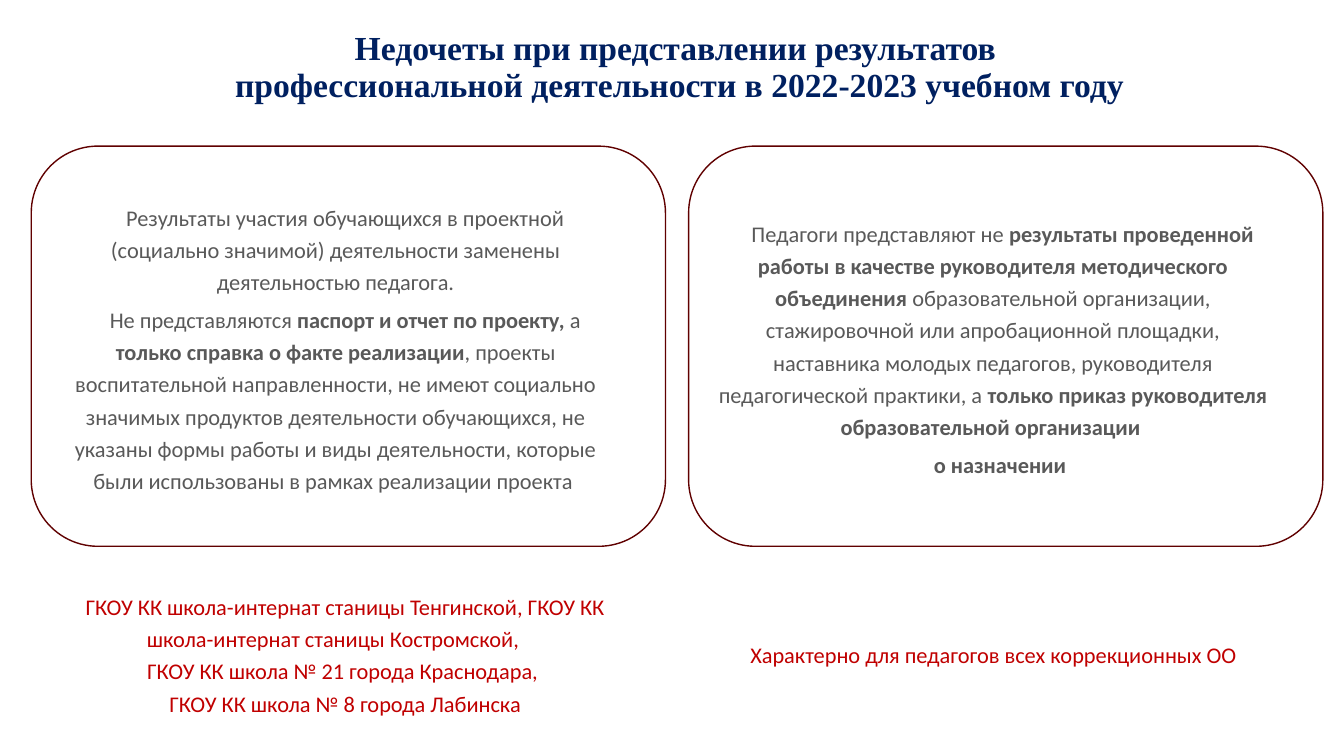
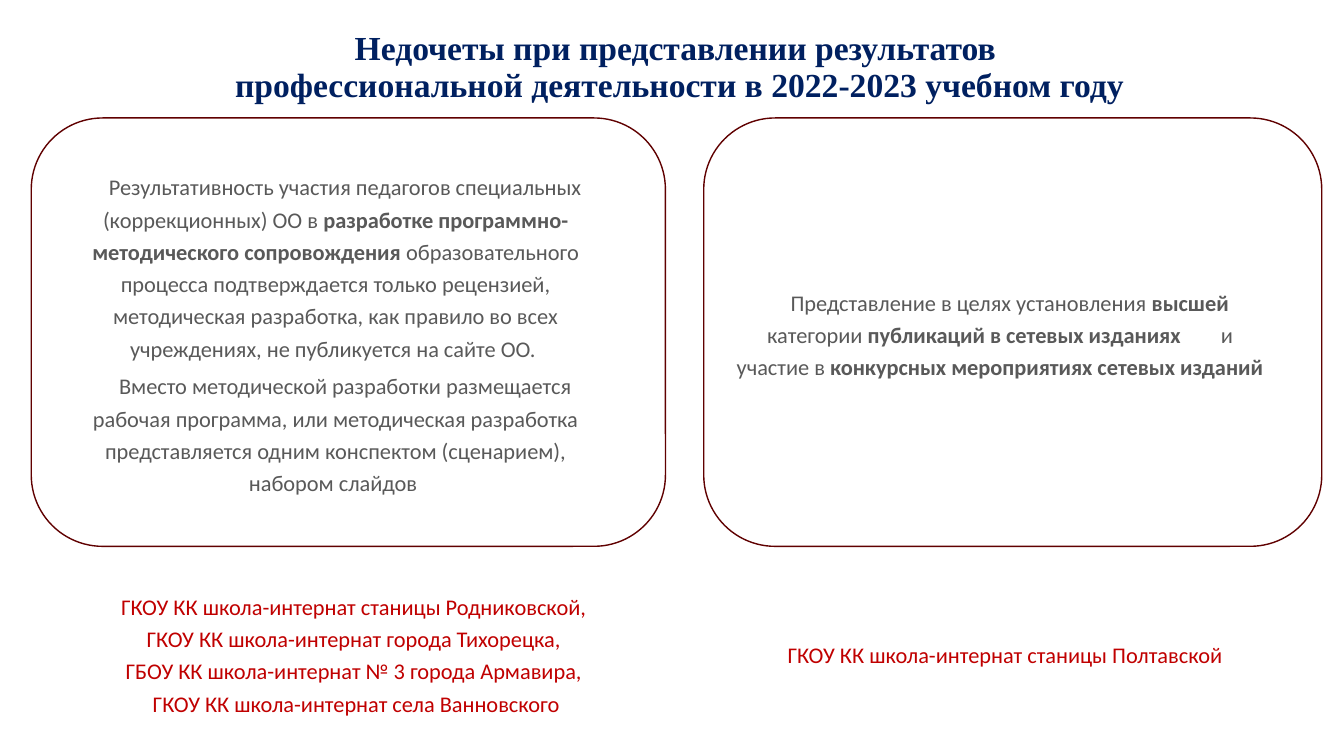
from lxml.etree import SubElement
from pptx import Presentation
from pptx.dml.color import RGBColor
from pptx.enum.shapes import MSO_SHAPE as Preset
from pptx.enum.text import MSO_ANCHOR as Anchor, PP_ALIGN as Align
from pptx.oxml.ns import qn
from pptx.util import Inches, Pt

# Shared style
NAVY = RGBColor(0x00, 0x20, 0x60)
MAROON = RGBColor(0x60, 0x00, 0x00)
GRAY = RGBColor(0x59, 0x59, 0x59)
RED = RGBColor(0xC0, 0x00, 0x00)
TITLE_FONT, BODY_FONT = "Times New Roman", "Calibri"
TITLE = ("Недочеты при представлении результатов \v"
         "профессиональной деятельности в 2022-2023 учебном году")

# Shared layout, in inches
LEFT = 0.31
PANEL_BOTTOM = 5.42
FIRST_INDENT = 0.19
RIGHT_INSET = 0.35
GAP_STOP = 4.9

# Content: ** switches bold on and off; a box is (left, width, paragraphs)
SLIDES = [
    {
        "panel_top": 1.45,
        "panels": [
            (LEFT, 6.29, [
                "Результаты участия обучающихся в проектной (социально значимой) "
                "деятельности заменены деятельностью педагога.",
                "Не представляются **паспорт и отчет по проекту,** а **только "
                "справка о факте реализации**, проекты воспитательной "
                "направленности, не имеют социально значимых продуктов "
                "деятельности обучающихся, не указаны формы работы и виды "
                "деятельности, которые были использованы в рамках реализации "
                "проекта ",
            ]),
            (6.83, 6.29, [
                "Педагоги представляют не **результаты проведенной работы в "
                "качестве руководителя методического объединения **"
                "образовательной организации, стажировочной или апробационной "
                "площадки, наставника молодых педагогов, руководителя "
                "педагогической практики, а **только приказ руководителя "
                "образовательной организации **",
                "**о назначении **",
            ]),
        ],
        "schools": (LEFT, 6.29, [
            "ГКОУ КК школа-интернат станицы Тенгинской, "
            "ГКОУ КК школа-интернат станицы Костромской, ",
            "ГКОУ КК школа № 21 города Краснодара, ",
            "ГКОУ КК школа № 8 города Лабинска",
        ]),
        "remark": (6.74, 6.29, ["Характерно для педагогов всех коррекционных ОО"]),
    },
    {
        "panel_top": 1.17,
        "panels": [
            (LEFT, 6.29, [
                "Результативность участия педагогов специальных "
                "(коррекционных) ОО в **разработке программно-методического "
                "сопровождения** образовательного процесса подтверждается только "
                "рецензией, методическая разработка, как правило во всех "
                "учреждениях, не публикуется на сайте ОО. ",
                "Вместо методической разработки размещается рабочая программа, "
                "или методическая разработка представляется одним конспектом "
                "(сценарием), набором слайдов ",
            ]),
            (6.98, 6.13, [
                "Представление в целях установления **высшей **категории "
                "**публикаций в сетевых изданиях**\tи участие в "
                "**конкурсных мероприятиях сетевых изданий **",
            ]),
        ],
        "schools": (LEFT, 6.51, [
            "ГКОУ КК школа-интернат станицы Родниковской, ",
            "ГКОУ КК школа-интернат города Тихорецка, ",
            "ГБОУ КК школа-интернат № 3 города Армавира, ",
            "ГКОУ КК школа-интернат села Ванновского",
        ]),
        "remark": (6.98, 6.04, ["ГКОУ КК школа-интернат станицы Полтавской"]),
    },
]


def style_font(font, name, size, color):
    font.name, font.size, font.color.rgb = name, Pt(size), color


def set_title(slide):
    title = slide.shapes.title
    title.left, title.top = Inches(0.48), Inches(0.19)
    title.width, title.height = Inches(12.52), Inches(0.97)
    title.text_frame.vertical_anchor = Anchor.MIDDLE
    heading = title.text_frame.paragraphs[0]
    heading.text = TITLE
    heading.alignment = Align.CENTER
    heading.line_spacing = 0.9
    heading.font.bold = True
    style_font(heading.font, TITLE_FONT, 24, NAVY)


def fill_paragraph(paragraph, text, color, spacing):
    paragraph.alignment = Align.CENTER
    paragraph.line_spacing = 1.2
    paragraph.space_before = paragraph.space_after = Pt(spacing)
    properties = paragraph._p.get_or_add_pPr()
    properties.set("marL", "0")
    properties.set("indent", str(Inches(FIRST_INDENT)))
    if "\t" in text:
        stops = SubElement(properties, qn("a:tabLst"))
        SubElement(stops, qn("a:tab"), pos=str(Inches(GAP_STOP)), algn="l")
    style_font(paragraph.font, BODY_FONT, 16, color)
    for index, part in enumerate(text.split("**")):
        if part:
            run = paragraph.add_run()
            run.text = part
            run.font.bold = index % 2 == 1


def add_box(slide, box, top, height, color, outline=None, spacing=0):
    left, width, texts = box
    shape = slide.shapes.add_shape(Preset.ROUNDED_RECTANGLE, Inches(left),
                                   Inches(top), Inches(width), Inches(height))
    shape.shadow.inherit = False
    shape.fill.background()
    if outline is None:
        shape.line.fill.background()
    else:
        shape.line.color.rgb = outline
        shape.line.width = Pt(1)
    frame = shape.text_frame
    frame.word_wrap = True
    frame.vertical_anchor = Anchor.MIDDLE
    frame.margin_right = Inches(RIGHT_INSET)
    for index, text in enumerate(texts):
        paragraph = frame.add_paragraph() if index else frame.paragraphs[0]
        fill_paragraph(paragraph, text, color, spacing)


def add_findings(deck, content):
    slide = deck.slides.add_slide(deck.slide_layouts[5])
    set_title(slide)
    # Outlined findings
    top = content["panel_top"]
    for panel in content["panels"]:
        add_box(slide, panel, top, PANEL_BOTTOM - top, GRAY, MAROON, spacing=2)
    # Schools concerned, below the findings
    add_box(slide, content["remark"], 5.87, 1.19, RED)
    add_box(slide, content["schools"], 5.69, 1.56, RED)


def main():
    deck = Presentation()
    deck.slide_width, deck.slide_height = Inches(13.33), Inches(7.5)
    for content in SLIDES:
        add_findings(deck, content)
    deck.save("out.pptx")


if __name__ == "__main__":
    main()
